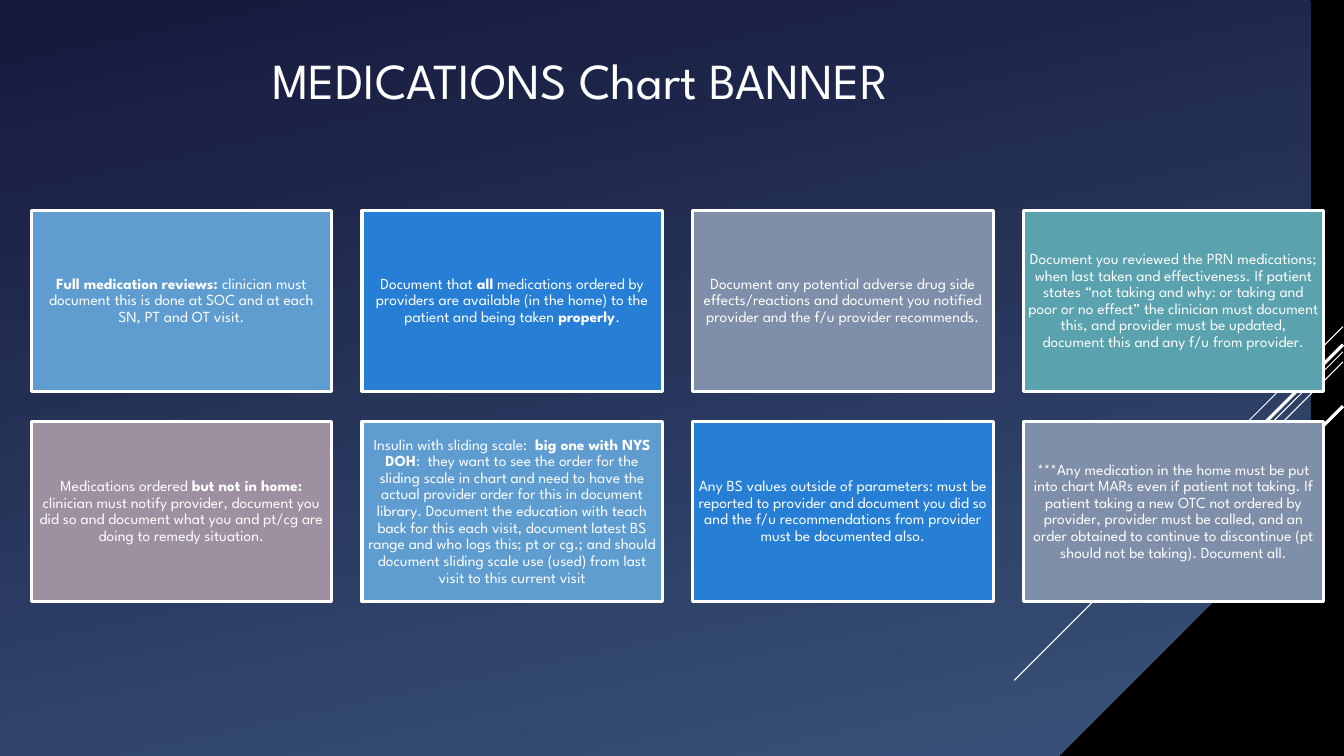
from pptx import Presentation
from pptx import util as u
from pptx.dml.color import RGBColor
from pptx.enum import shapes, text
from pptx.oxml.ns import qn
from lxml import etree

TITLE = "MEDICATIONS Chart BANNER"
CARDS = [
    ("sky", ["", "Full medication reviews:",
             " clinician must document this is done at SOC and at each SN, PT and OT visit."]),
    ("blue", ["Document that", " all",
              " medications ordered by providers are available (in the home) to the patient "
              "and being taken ", "properly", "."]),
    ("slate", ["Document any potential adverse drug side effects/reactions and document you "
               "notified provider and the f/u provider recommends."]),
    ("teal", ["Document you reviewed the PRN medications; when last taken and effectiveness. "
              "If patient states “not taking and why: or taking and poor or no effect” the "
              "clinician must document this, and provider must be updated, document this and "
              "any f/u from provider."]),
    ("mauve", ["Medications ordered ", "but not in home:",
               " clinician must notify provider, document you did so and document what you "
               "and pt/cg are doing to remedy situation."]),
    ("sky", ["Insulin with sliding scale:  ", "big one with NYS DOH",
             ":  they want to see the order for the sliding scale in chart and need to have "
             "the actual provider order for this in document library. Document the education "
             "with teach back for this each visit, document latest BS range and who logs "
             "this; pt or cg.; and should document sliding scale use (used) from last visit "
             "to this current visit"]),
    ("blue", ["Any BS values outside of parameters: must be reported to provider and document "
              "you did so and the f/u recommendations from provider must be documented also."]),
    ("slate", ["***Any medication in the home must be put into chart MARs even if patient not "
               "taking. If patient taking a new OTC not ordered by provider, provider must be "
               "called, and an order obtained to continue to discontinue (pt should not be "
               "taking). Document all."]),
]
RAYS = [(3.24, 1, "thin"), (3.49, 3.26, "thin"), (3.59, 2.07, "thin"),
        (3.42, 1.91, "thick"), (4.03, 1.39, "thick")]
THEME = {
    "font": "League Spartan", "title": 36, "body": 11, "thin": 0.75, "thick": 2.25,
    "white": "FFFFFF", "black": "000000", "dark": "15193C", "light": "385077",
    "sky": "5F9DD1", "blue": "267FD5", "slate": "7F8FA9", "teal": "5AA2AE", "mauve": "9D90A0",
}
WIDE, HIGH, CUT = 13.33, 7.5, 2.88
EDGE = 13.32
COLS, LEFT, TOP = 4, 0.31, 2.09
CARD_W, CARD_H, GAP = 2.98, 1.79, 0.3


def color(name):
    return RGBColor.from_string(THEME[name])


def style(item, values):
    for key, value in values.items():
        setattr(item, key, value)


def write(shape, parts, size, align, pad):
    frame = shape.text_frame
    style(frame, {"word_wrap": True, "vertical_anchor": text.MSO_ANCHOR.MIDDLE,
                  "margin_left": u.Inches(pad), "margin_right": u.Inches(pad),
                  "margin_top": u.Inches(0.05), "margin_bottom": u.Inches(0.05)})
    para = frame.paragraphs[0]
    style(para, {"alignment": align, "line_spacing": 0.9})
    for i, part in enumerate(parts):
        if part:
            run = para.add_run()
            run.text = part
            style(run.font, {"name": THEME["font"], "size": u.Pt(THEME[size]),
                             "bold": i % 2 == 1})
            run.font.color.rgb = color("white")


def backdrop(slide):
    slide.background.fill.solid()
    slide.background.fill.fore_color.rgb = color("black")
    pen = slide.shapes.build_freeform(0, 0, scale=u.Inches(1))
    pen.add_line_segments([(WIDE, 0), (WIDE, HIGH - CUT), (WIDE - CUT, HIGH), (0, HIGH)])
    panel = pen.convert_to_shape()
    panel.shadow.inherit = False
    panel.line.fill.background()
    panel.fill.gradient()
    panel.fill.gradient_angle = 282
    for stop, (name, place) in zip(panel.fill.gradient_stops, [("dark", 0), ("light", 0.9)]):
        stop.color.rgb = color(name)
        stop.position = place


def ray(slide, y, run, weight):
    line = slide.shapes.add_connector(
        shapes.MSO_CONNECTOR.STRAIGHT, u.Inches(EDGE), u.Inches(y),
        u.Inches(EDGE - run), u.Inches(y + run))
    line.line.color.rgb = color("white")
    line.line.width = u.Pt(THEME[weight])
    etree.SubElement(line._element.spPr, qn("a:effectLst"))


def card(slide, i, fill, parts):
    row, col = divmod(i, COLS)
    box = slide.shapes.add_shape(
        shapes.MSO_SHAPE.RECTANGLE,
        u.Inches(LEFT + col * (CARD_W + GAP)), u.Inches(TOP + row * (CARD_H + GAP)),
        u.Inches(CARD_W), u.Inches(CARD_H))
    box.shadow.inherit = False
    box.fill.solid()
    box.fill.fore_color.rgb = color(fill)
    box.line.color.rgb = color("white")
    box.line.width = u.Pt(THEME["thick"])
    write(box, parts, "body", text.PP_ALIGN.CENTER, 0.05)


def main():
    deck = Presentation()
    style(deck, {"slide_width": u.Inches(WIDE), "slide_height": u.Inches(HIGH)})
    slide = deck.slides.add_slide(deck.slide_layouts[6])
    backdrop(slide)
    head = slide.shapes.add_textbox(u.Inches(2.6), 0, u.Inches(9.33), u.Inches(1.65))
    write(head, [TITLE], "title", text.PP_ALIGN.LEFT, 0.1)
    for item in RAYS:
        ray(slide, *item)
    for i, item in enumerate(CARDS):
        card(slide, i, *item)
    deck.save("out.pptx")


if __name__ == "__main__":
    main()
